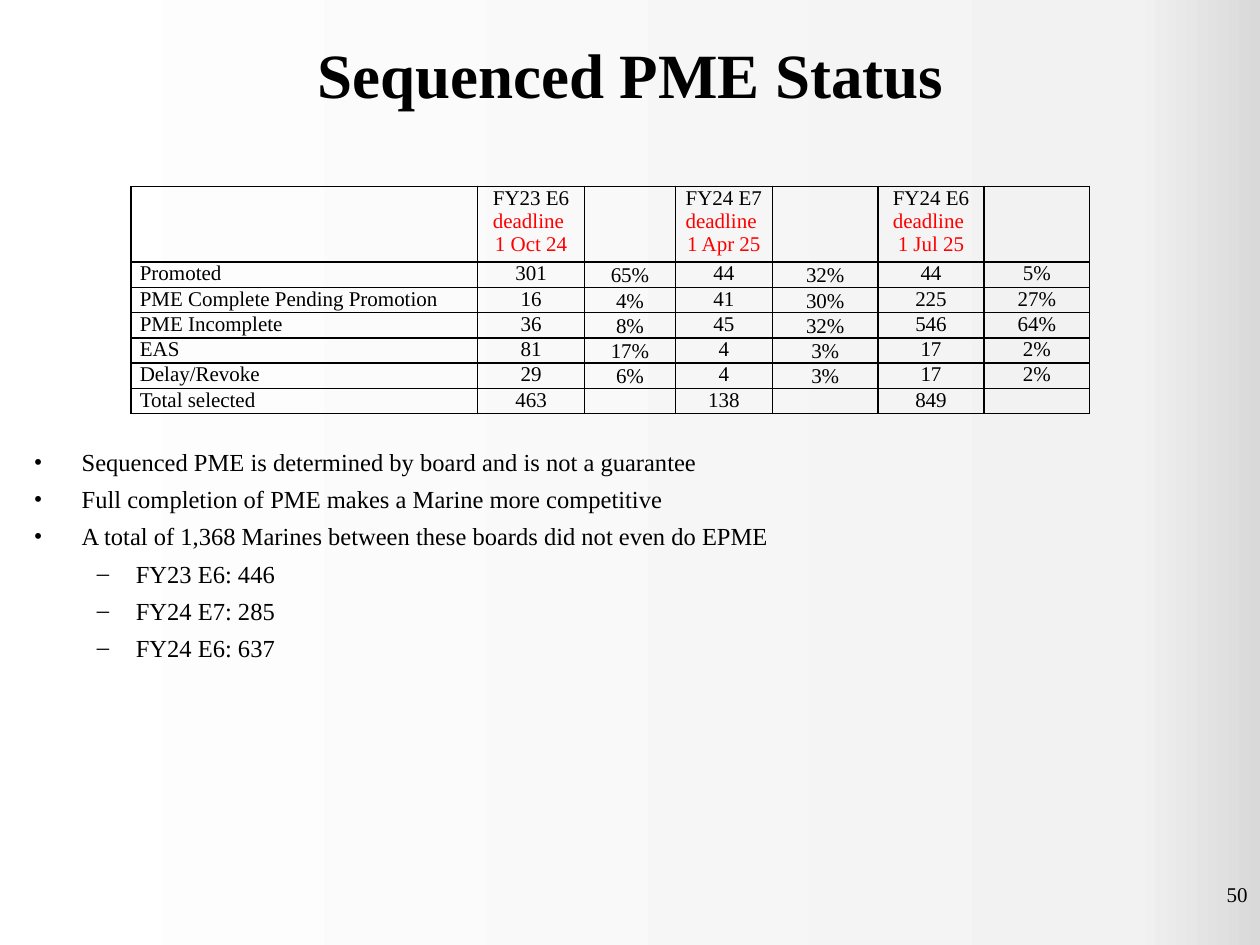
from copy import deepcopy
from dataclasses import dataclass

from lxml.etree import SubElement
from pptx import Presentation
from pptx.dml.color import RGBColor as RGB
from pptx.enum.text import MSO_ANCHOR as Anchor, PP_ALIGN as Align
from pptx.oxml.ns import qn
from pptx.util import Inches, Pt

COLS, ROWS = 100, 75  # slide grid
UNIT = Inches(10) // COLS


@dataclass(frozen=True)
class Theme:
    font: str = "Times New Roman"
    ink: str = "000000"
    alert: str = "FF0000"
    fade: tuple = ((0, "FFFFFF"), (0.9, "F2F2F2"), (1, "D9D9D9"))
    title: int = 36
    body: int = 14
    small: int = 12
    rule: int = 1
    gap: float = 4.4


THEME = Theme()

WIDTHS = (27.5, 8.5, 7.2, 7.7, 8.4, 8.4, 8.4)
ROW = 1.8
PAD = 0.7
HEAD = (
    "",
    "FY23 E6\ndeadline \n1 Oct 24", "",
    "FY24 E7\ndeadline \n1 Apr 25", "",
    "FY24 E6\ndeadline \n1 Jul 25", "",
)
STATUS = (
    HEAD,
    ("Promoted", "301", "65%", "44", "32%", "44", "5%"),
    ("PME Complete Pending Promotion", "16", "4%", "41", "30%", "225", "27%"),
    ("PME Incomplete", "36", "8%", "45", "32%", "546", "64%"),
    ("EAS", "81", "17%", "4", "3%", "17", "2%"),
    ("Delay/Revoke", "29", "6%", "4", "3%", "17", "2%"),
    ("Total selected", "463", "", "138", "", "849", ""),
)
LOW = (2, 4)  # columns whose text sits at the cell bottom

NOTES = (
    (0, "Sequenced PME is determined by board and is not a guarantee"),
    (0, "Full completion of PME makes a Marine more competitive"),
    (0, "A total of 1,368 Marines between these boards did not even do EPME"),
    (1, "FY23 E6: 446"),
    (1, "FY24 E7: 285"),
    (1, "FY24 E6: 637"),
)
MARKS = (("•", 3.8, 3.8), ("–", 8.1, 3.1))  # sign, indent, hang


def grid(*units):
    return [round(u * UNIT) for u in units]


def style(par, size, color=THEME.ink, bold=False):
    for run in par.runs:
        font = run.font
        font.name, font.size, font.bold = THEME.font, Pt(size), bold
        font.color.rgb = RGB.from_string(color)


def add_text(slide, box, text, size, align=Align.LEFT, bold=False,
             anchor=Anchor.TOP):
    frame = slide.shapes.add_textbox(*grid(*box)).text_frame
    frame.word_wrap = True
    frame.vertical_anchor = anchor
    frame.text = text
    for par in frame.paragraphs:
        par.alignment = align
        style(par, size, bold=bold)
    return frame


def add_fade(slide):
    """Fill the background with a three-stop gradient, left to right."""
    fill = slide.background.fill
    fill.gradient()
    fill.gradient_angle = 0
    stops = slide._element.find(".//" + qn("a:gsLst"))
    stops.append(deepcopy(stops[-1]))
    for stop, (place, color) in zip(fill.gradient_stops, THEME.fade):
        stop.position = place
        stop.color.rgb = RGB.from_string(color)


def add_rules(cell):
    props = cell._tc.get_or_add_tcPr()
    for index, side in enumerate(("lnL", "lnR", "lnT", "lnB")):
        line = props.makeelement(qn("a:" + side), {"w": str(Pt(THEME.rule))})
        fill = SubElement(line, qn("a:solidFill"))
        SubElement(fill, qn("a:srgbClr"), val=THEME.ink)
        props.insert(index, line)


def fill_cell(cell, text, row, col):
    cell.fill.background()
    cell.margin_left = cell.margin_right = grid(PAD)[0]
    cell.margin_top = cell.margin_bottom = 0
    cell.vertical_anchor = Anchor.BOTTOM if row and col in LOW else Anchor.TOP
    cell.text_frame.text = text
    for line, par in enumerate(cell.text_frame.paragraphs):
        par.alignment = Align.CENTER if col else Align.LEFT
        style(par, THEME.small, THEME.alert if line else THEME.ink)
        if not text:
            SubElement(par._p, qn("a:endParaRPr"), sz=str(THEME.small * 100))
    add_rules(cell)


def add_status(slide, box):
    frame = slide.shapes.add_table(len(STATUS), len(WIDTHS), *grid(*box))
    table = frame.table
    table.first_row = table.horz_banding = False
    for col, width in zip(table.columns, grid(*WIDTHS)):
        col.width = width
    for r, texts in enumerate(STATUS):
        table.rows[r].height = grid(ROW)[0]
        for c, text in enumerate(texts):
            fill_cell(table.cell(r, c), text, r, c)


def add_notes(slide, box):
    text = "\n".join(note for _, note in NOTES)
    frame = add_text(slide, box, text, THEME.body)
    for i, (par, (level, _)) in enumerate(zip(frame.paragraphs, NOTES)):
        sign, left, hang = MARKS[level]
        par.level = level
        props = par._p.get_or_add_pPr()
        left, hang = grid(left, hang)
        props.set("marL", str(left))
        props.set("indent", str(-hang))
        SubElement(props, qn("a:buFont"), typeface=THEME.font)
        SubElement(props, qn("a:buChar"), char=sign)
        if i:
            par.space_before = Pt(THEME.gap)


def main():
    deck = Presentation()
    deck.slide_width, deck.slide_height = grid(COLS, ROWS)
    slide = deck.slides.add_slide(deck.slide_layouts[6])
    add_fade(slide)
    add_text(slide, (4.1, 0, 91.9, 11.7), "Sequenced PME Status", THEME.title,
             Align.CENTER, True, Anchor.MIDDLE)
    add_status(slide, (10.4, 14.8, sum(WIDTHS), ROW * len(STATUS)))
    add_text(slide, (76.7, 69.5, 23.3, 4), "50", THEME.small, Align.RIGHT)
    add_notes(slide, (1.7, 35, 85, 35.8))
    deck.save("out.pptx")


if __name__ == "__main__":
    main()
